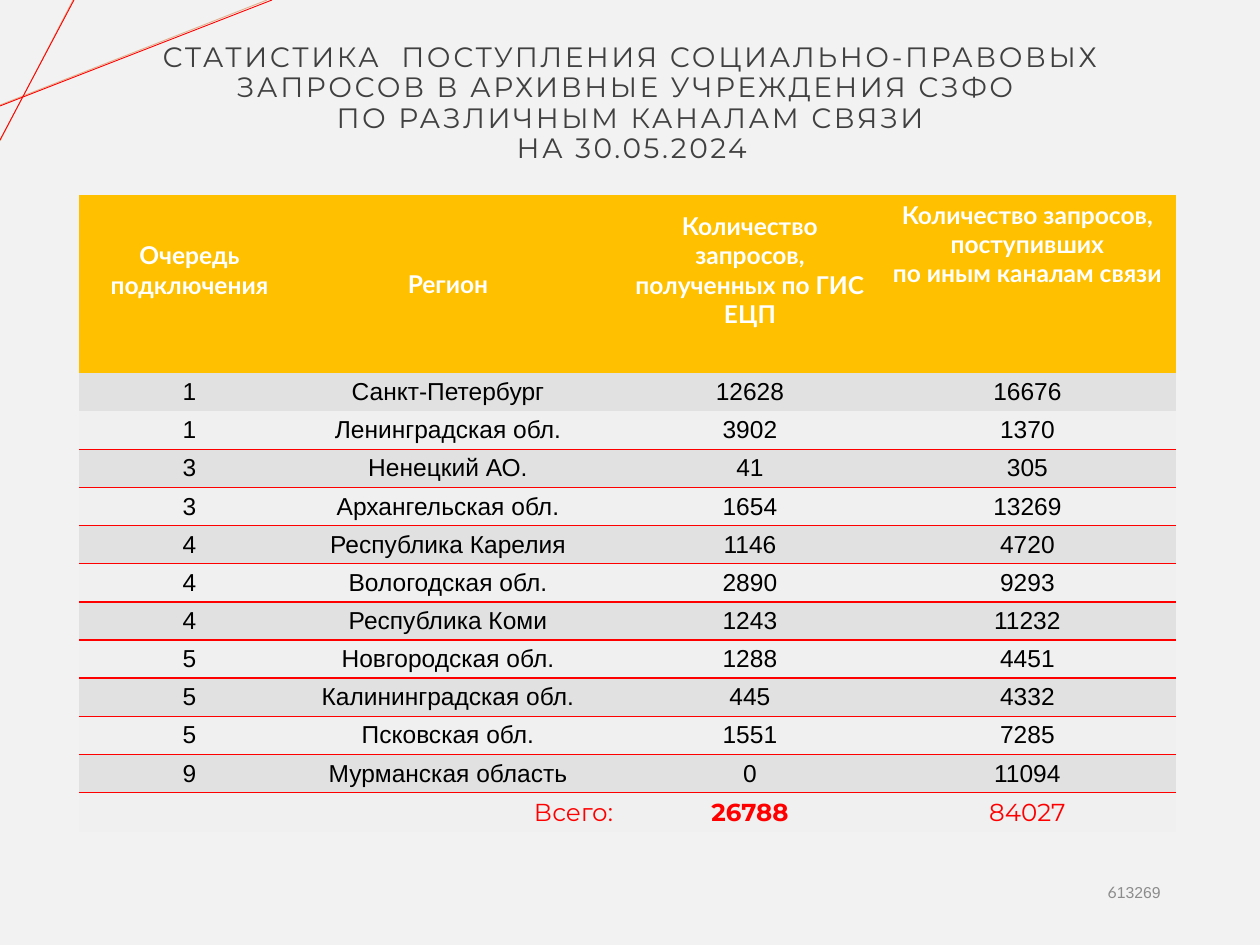
from lxml.etree import SubElement
from pptx import Presentation
from pptx.dml.color import RGBColor
from pptx.enum.shapes import MSO_CONNECTOR
from pptx.enum.text import MSO_ANCHOR, MSO_AUTO_SIZE, PP_ALIGN
from pptx.oxml import parse_xml
from pptx.oxml.ns import nsdecls, qn
from pptx.util import Pt

SCALE = 914400 / 126
RED = "FF0000"
PLAIN = "{2D5ABB26-0587-4C30-8999-92F81FD0307C}"
TITLE = ("СТАТИСТИКА  ПОСТУПЛЕНИЯ СОЦИАЛЬНО-ПРАВОВЫХ ЗАПРОСОВ В АРХИВНЫЕ "
         "УЧРЕЖДЕНИЯ СЗФО \vПО РАЗЛИЧНЫМ КАНАЛАМ СВЯЗИ\vНА 30.05.2024")
HEADS = ["Очередь подключения", "Регион",
         "Количество запросов, полученных по ГИС ЕЦП",
         "Количество запросов, поступивших\nпо иным каналам связи"]
ROWS = [
    (1, "Санкт-Петербург", 12628, 16676),
    (1, "Ленинградская обл.", 3902, 1370),
    (3, "Ненецкий АО.", 41, 305),
    (3, "Архангельская обл.", 1654, 13269),
    (4, "Республика Карелия", 1146, 4720),
    (4, "Вологодская обл.", 2890, 9293),
    (4, "Республика Коми", 1243, 11232),
    (5, "Новгородская обл.", 1288, 4451),
    (5, "Калининградская обл.", 445, 4332),
    (5, "Псковская обл.", 1551, 7285),
    (9, "Мурманская область", 0, 11094),
]
TOTAL = ("", "Всего:", 26788, 84027)
RULED = {2, 3, 4, 5, 7, 8, 10, 11}
WIDTHS = [204, 338, 258, 297]
LEFTS = [25, 0, 8, 8]


def px(num):
    return round(num * SCALE)


def paint(code):
    return RGBColor.from_string(code)


def write(frame, text, size=14, font="Arial", color="000000", bold=False,
          align=PP_ALIGN.CENTER, gap=None, lead=None, more=False):
    """Put text in a frame, or add it to the last line, and format it."""
    if more:
        run = frame.paragraphs[-1].add_run()
        run.text = text
        runs = [run]
    else:
        frame.text = text
        runs = [run for para in frame.paragraphs for run in para.runs]
    for para in frame.paragraphs:
        para.alignment = align
        if lead:
            para.line_spacing = lead
        if not para.runs:
            SubElement(para._p, qn("a:endParaRPr"), sz=str(size * 100))
    for run in runs:
        run.font.size, run.font.name, run.font.bold = Pt(size), font, bold
        run.font.color.rgb = paint(color)
        if gap:
            run._r.get_or_add_rPr().set("spc", str(gap))


class Deck:
    """Hold the style and the current slide."""

    def __init__(self):
        self.file = Presentation()
        self.file.slide_width, self.file.slide_height = px(1260), px(945)
        self.slide = self.file.slides.add_slide(self.file.slide_layouts[5])
        fill = self.slide.background.fill
        fill.solid()
        fill.fore_color.rgb = paint("F2F2F2")

    def title(self, text, x, y, wide, high):
        box = self.slide.shapes.title
        box.left, box.top, box.width, box.height = map(px, (x, y, wide, high))
        frame = box.text_frame
        frame.word_wrap, frame.auto_size = True, MSO_AUTO_SIZE.NONE
        frame.vertical_anchor = MSO_ANCHOR.MIDDLE
        write(frame, text, size=16, font="Montserrat", color="404040",
              gap=150, lead=0.9)

    def line(self, x1, y1, x2, y2, color):
        line = self.slide.shapes.add_connector(
            MSO_CONNECTOR.STRAIGHT, *map(px, (x1, y1, x2, y2)))
        line.line.color.rgb = paint(color)
        line.line.width = Pt(0.5)
        SubElement(line.element.find(qn("p:spPr")), qn("a:effectLst"))

    def grid(self, x, y, head, body, count):
        shape = self.slide.shapes.add_table(
            count + 1, len(WIDTHS), px(x), px(y), px(sum(WIDTHS)), px(head + body))
        for node in shape.element.iter(qn("a:tableStyleId")):
            node.text = PLAIN
        table = shape.table
        table.horz_banding = False
        for col, wide in zip(table.columns, WIDTHS):
            col.width = px(wide)
        for num, row in enumerate(table.rows):
            row.height = px(body / count if num else head)
        return table

    def cell(self, cell, text, fill, left=8, low=5, anchor=MSO_ANCHOR.MIDDLE,
             edges=(), **form):
        cell.margin_left, cell.margin_right = px(left), px(8)
        cell.margin_top, cell.margin_bottom = px(5), px(low)
        cell.vertical_anchor = anchor
        cell.fill.solid()
        cell.fill.fore_color.rgb = paint(fill)
        write(cell.text_frame, text, **form)
        for spot, tag in enumerate(edges):
            cell._tc.get_or_add_tcPr().insert(spot, parse_xml(
                f'<a:{tag} {nsdecls("a")} w="12700"><a:solidFill>'
                f'<a:srgbClr val="{RED}"/></a:solidFill></a:{tag}>'))

    def number(self, x, y, wide, high):
        box = self.slide.shapes.add_textbox(*map(px, (x, y, wide, high)))
        frame = box.text_frame
        frame.word_wrap = True
        frame.vertical_anchor = MSO_ANCHOR.MIDDLE
        frame.margin_bottom = px(24)
        form = dict(size=9, color="8C8C8C", align=PP_ALIGN.RIGHT)
        write(frame, "6", font="Lato", **form)
        write(frame, "13269", more=True, **form)


def main():
    deck = Deck()
    deck.line(0, 105, 267, 0, "E2B18D")
    deck.line(73, 0, 0, 141, "E2B18D")
    deck.title(TITLE, 89, 13, 1086, 182)
    table = deck.grid(79, 195, 178, 458, len(ROWS) + 1)
    for col, text in enumerate(HEADS):
        last = col == len(HEADS) - 1
        deck.cell(table.cell(0, col), text, "FFC000", left=LEFTS[col],
                  low=5 if col == 1 else 33,
                  anchor=MSO_ANCHOR.TOP if last else MSO_ANCHOR.MIDDLE,
                  font="Lato", color="FFFFFF", bold=True)
    for num, row in enumerate(ROWS, 1):
        edges = [tag for tag, rule in (("lnT", num - 1), ("lnB", num))
                 if rule in RULED]
        for col, value in enumerate(row):
            deck.cell(table.cell(num, col), str(value),
                      "E1E1E1" if num % 2 else "F0F0F0",
                      left=LEFTS[col], edges=edges)
    for col, value in enumerate(TOTAL):
        deck.cell(table.cell(len(ROWS) + 1, col), str(value), "F0F0F0",
                  edges=["lnT"], font="Montserrat", color=RED, bold=col == 2,
                  align=PP_ALIGN.RIGHT if col == 1 else PP_ALIGN.CENTER)
    deck.line(0, 106, 272, 0, RED)
    deck.line(0, 140, 74, 0, RED)
    deck.number(890, 876, 283, 50)
    deck.file.save("out.pptx")


if __name__ == "__main__":
    main()
